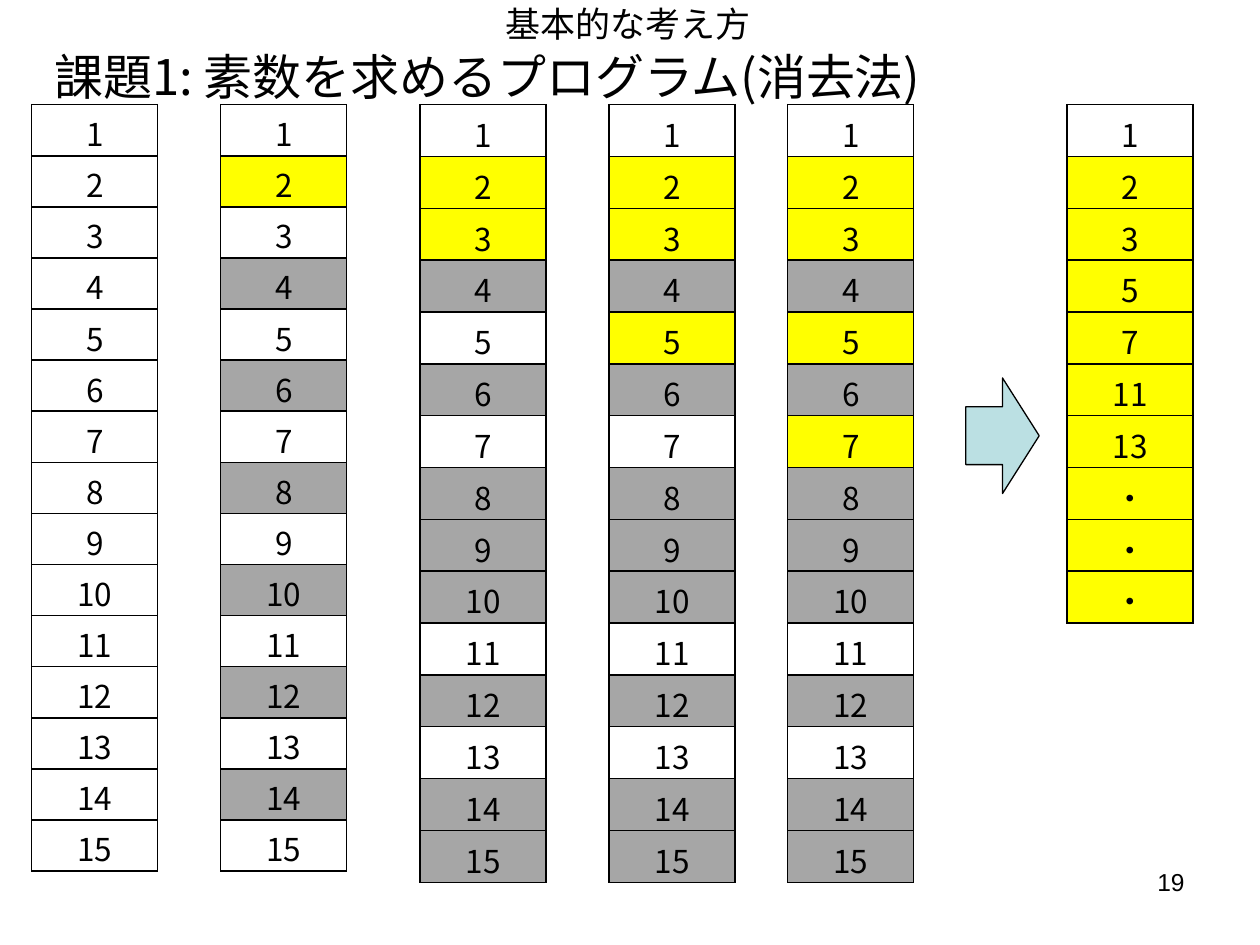
from lxml.etree import SubElement
from pptx import Presentation
from pptx.dml.color import RGBColor
from pptx.enum.shapes import MSO_SHAPE as Shape
from pptx.enum.text import MSO_ANCHOR as Anchor, MSO_AUTO_SIZE as AutoSize, PP_ALIGN as Align
from pptx.oxml.ns import qn
from pptx.util import Cm, Pt

COLORS = {"ink": "000000", "prime": "FFFF00", "removed": "A6A6A6", "arrow": "BBE0E3"}
JAPANESE = "Noto Sans CJK JP"
LIMIT = 15
TABLE_TOP = 2.11
COLUMN_WIDTH = 2.54
LINE_HEIGHT = 0.92
STEPS = [
    (0.64, 1.03, []),
    (4.45, 1.03, [2]),
    (8.47, 1.045, [2, 3]),
    (12.28, 1.045, [2, 3, 5]),
    (15.88, 1.045, [2, 3, 5, 7]),
]
RESULT = ["1", "2", "3", "5", "7", "11", "13", "・", "・", "・"]


def color(name):
    """Return the named colour."""
    return RGBColor.from_string(COLORS[name])


def write(frame, text, size, align, font=JAPANESE, spacing=None):
    """Put one formatted paragraph into a text frame."""
    frame.text = text
    paragraph = frame.paragraphs[0]
    paragraph.alignment = align
    paragraph.line_spacing = spacing
    run = paragraph.runs[0]
    run.font.size = Pt(size)
    run.font.name = font
    run.font.color.rgb = color("ink")
    SubElement(run.font._element, qn("a:ea"), typeface=font)


def add_title(slide, text):
    """Place and format the title placeholder."""
    title = slide.shapes.title
    title.left, title.top, title.width, title.height = Cm(0.84), Cm(0.56), Cm(21.59), Cm(1.7)
    frame = title.text_frame
    frame.auto_size = AutoSize.NONE
    frame.word_wrap = True
    frame.vertical_anchor = Anchor.BOTTOM
    write(frame, text, 28, Align.LEFT, spacing=1.2)


def add_label(slide, box, text, size, align, **style):
    """Add a wrapping text box."""
    frame = slide.shapes.add_textbox(*map(Cm, box)).text_frame
    frame.word_wrap = True
    write(frame, text, size, align, **style)


def add_borders(cell):
    """Draw a thin line on all four sides of a cell."""
    properties = cell._tc.get_or_add_tcPr()
    for position, side in enumerate(("a:lnL", "a:lnR", "a:lnT", "a:lnB")):
        line = properties.makeelement(qn(side), {"w": str(Pt(1))})
        fill = SubElement(line, qn("a:solidFill"))
        SubElement(fill, qn("a:srgbClr"), val=COLORS["ink"])
        properties.insert(position, line)


def add_number_column(slide, left, row_height, entries):
    """Add a one-column table from (text, fill name) entries."""
    box = (left, TABLE_TOP, COLUMN_WIDTH, row_height * len(entries))
    table = slide.shapes.add_table(len(entries), 1, *map(Cm, box)).table
    table.first_row = table.horz_banding = False
    for row, (text, fill) in enumerate(entries):
        table.rows[row].height = Cm(row_height)
        cell = table.cell(row, 0)
        cell.margin_top, cell.margin_bottom = Cm(row_height - LINE_HEIGHT), 0
        write(cell.text_frame, text, 18, Align.CENTER)
        if fill:
            cell.fill.solid()
            cell.fill.fore_color.rgb = color(fill)
        else:
            cell.fill.background()
        add_borders(cell)


def sieve_fill(number, primes):
    """Name the fill of a number once the multiples of the primes are removed."""
    if number in primes:
        return "prime"
    return "removed" if any(number % prime == 0 for prime in primes) else None


def add_arrow(slide, box):
    """Add the block arrow that leads to the result."""
    arrow = slide.shapes.add_shape(Shape.RIGHT_ARROW, *map(Cm, box))
    arrow.shadow.inherit = False
    arrow.fill.solid()
    arrow.fill.fore_color.rgb = color("arrow")
    arrow.line.color.rgb = color("ink")
    arrow.line.width = Pt(0.75)


def main():
    """Build the slide on the sieve for prime numbers."""
    deck = Presentation()
    deck.slide_width, deck.slide_height = Cm(25.4), Cm(19.05)
    slide = deck.slides.add_slide(deck.slide_layouts[5])
    add_title(slide, "課題1: 素数を求めるプログラム(消去法)")
    add_label(slide, (1.27, -0.25, 22.78, 1.24), "基本的な考え方", 20, Align.CENTER, spacing=1.2)
    for left, row_height, primes in STEPS:
        entries = [(str(n), sieve_fill(n, primes)) for n in range(1, LIMIT + 1)]
        add_number_column(slide, left, row_height, entries)
    result = [(text, None if text == "1" else "prime") for text in RESULT]
    add_number_column(slide, 21.51, 1.045, result)
    add_arrow(slide, (19.47, 7.62, 1.48, 2.33))
    add_label(slide, (18.2, 17.36, 5.93, 1.32), "19", 14, Align.RIGHT, font="Arial")
    deck.save("out.pptx")


if __name__ == "__main__":
    main()
